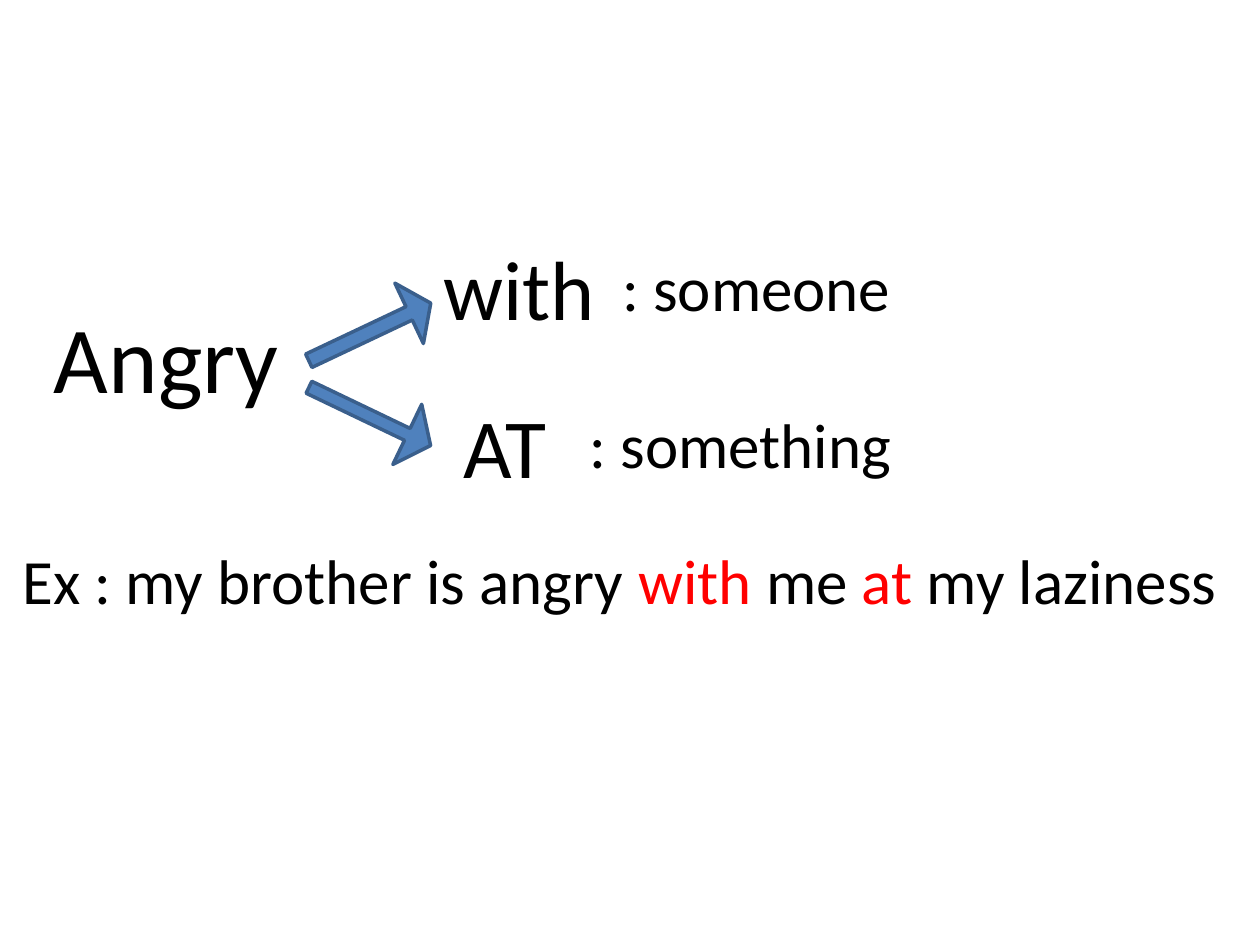
from typing import NamedTuple

from pptx import Presentation
from pptx.dml.color import RGBColor
from pptx.enum.shapes import MSO_SHAPE
from pptx.enum.text import MSO_AUTO_SIZE
from pptx.slide import Slide
from pptx.util import Pt

COLORS = {
    "text": "000000",
    "preposition": "FF0000",
    "arrow_fill": "4F81BD",
    "arrow_line": "3A5F8C",
}
FONT = "Calibri"
ARROW_LEFT, ARROW_WIDTH, ARROW_HEIGHT = 172.8, 77.04, 38.16


class Label(NamedTuple):
    left: float
    top: float
    width: float
    height: float
    size: float
    runs: list[tuple[str, str]]


class Arrow(NamedTuple):
    top: float
    rotation: float
    shaft: float
    head: float


LABELS = [
    Label(23.76, 167.04, 156.96, 72.72, 54, [("Angry", "text")]),
    Label(246.24, 131.76, 102.24, 65.52, 48, [("with", "text")]),
    Label(257.76, 221.76, 62.64, 65.52, 48, [("AT", "text")]),
    Label(348.48, 138.24, 177.84, 51.12, 36, [(": someone", "text")]),
    Label(329.76, 228.24, 188.64, 51.12, 36, [(": something", "text")]),
    Label(5.76, 306, 718.56, 51.12, 36, [
        ("Ex : my brother is angry ", "text"),
        ("with", "preposition"),
        (" me ", "text"),
        ("at", "preposition"),
        (" my laziness", "text"),
    ]),
]
ARROWS = [
    Arrow(170.64, 334.7, 0.22, 0.357),
    Arrow(218.88, 25.6, 0.197, 0.386),
]


def color(name: str) -> RGBColor:
    return RGBColor.from_string(COLORS[name])


def add_label(slide: Slide, label: Label) -> None:
    shape = slide.shapes.add_textbox(
        Pt(label.left), Pt(label.top), Pt(label.width), Pt(label.height)
    )
    frame = shape.text_frame
    frame.word_wrap = False
    frame.auto_size = MSO_AUTO_SIZE.SHAPE_TO_FIT_TEXT
    paragraph = frame.paragraphs[0]
    paragraph.font.name = FONT
    paragraph.font.size = Pt(label.size)
    for text, color_name in label.runs:
        run = paragraph.add_run()
        run.text = text
        run.font.color.rgb = color(color_name)


def add_arrow(slide: Slide, arrow: Arrow) -> None:
    shape = slide.shapes.add_shape(
        MSO_SHAPE.RIGHT_ARROW,
        Pt(ARROW_LEFT), Pt(arrow.top), Pt(ARROW_WIDTH), Pt(ARROW_HEIGHT),
    )
    shape.rotation = arrow.rotation
    shape.adjustments[0] = arrow.shaft
    shape.adjustments[1] = arrow.head
    shape.shadow.inherit = False
    shape.fill.solid()
    shape.fill.fore_color.rgb = color("arrow_fill")
    shape.line.color.rgb = color("arrow_line")
    shape.line.width = Pt(2)


def main() -> None:
    presentation = Presentation()
    presentation.slide_width = Pt(720)
    presentation.slide_height = Pt(540)
    slide = presentation.slides.add_slide(presentation.slide_layouts[6])
    for arrow in ARROWS:
        add_arrow(slide, arrow)
    for label in LABELS:
        add_label(slide, label)
    presentation.save("out.pptx")


if __name__ == "__main__":
    main()
